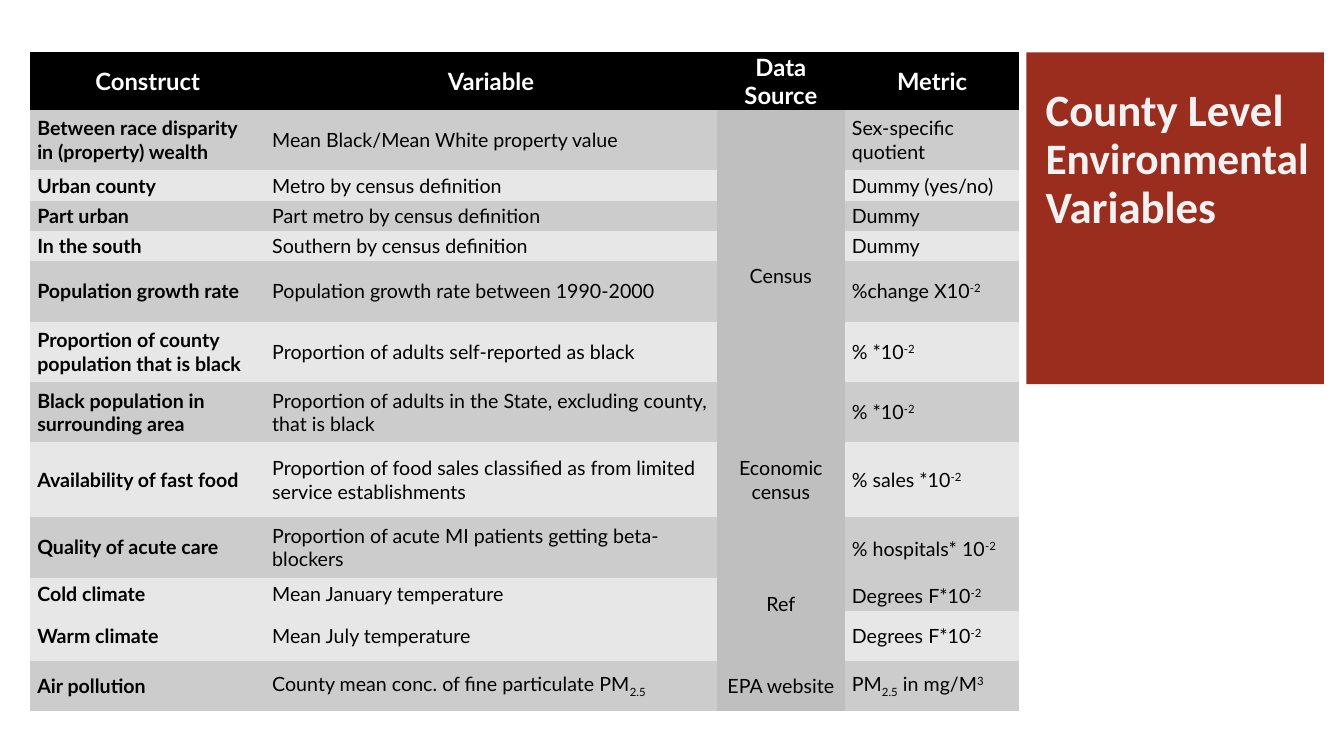
from pptx import Presentation
from pptx.dml.color import RGBColor
from pptx.enum.shapes import MSO_SHAPE
from pptx.enum.text import MSO_ANCHOR, MSO_AUTO_SIZE, PP_ALIGN
from pptx.oxml.ns import qn
from pptx.util import Inches, Pt

RECTANGLE = MSO_SHAPE.RECTANGLE
MIDDLE = MSO_ANCHOR.MIDDLE
NO_AUTOFIT = MSO_AUTO_SIZE.NONE
LEFT, CENTER = PP_ALIGN.LEFT, PP_ALIGN.CENTER

BLACK = RGBColor(0, 0, 0)
WHITE = RGBColor(255, 255, 255)
RED = RGBColor(0x9B, 0x2D, 0x1F)
OFF_WHITE = RGBColor(0xF2, 0xF2, 0xF2)
DARK_BAND = RGBColor(0xCC, 0xCC, 0xCC)
LIGHT_BAND = RGBColor(0xE7, 0xE7, 0xE7)
SOURCE_GRAY = RGBColor(0xBF, 0xBF, 0xBF)
PLAIN_TABLE_STYLE = "{2D5ABB26-0587-4C30-8999-92F81FD0307C}"

SUPERSCRIPT, SUBSCRIPT = 30000, -25000
HUNDREDTH = ("-2", SUPERSCRIPT)
FINE = ("2.5", SUBSCRIPT)

COLUMN_WIDTHS = [2.33, 4.48, 1.27, 1.73]
ROW_HEIGHTS = [0.57, 0.6, 0.3, 0.3, 0.3, 0.6, 0.6, 0.6, 0.74, 0.6, 0.03, 0.3, 0.5, 0.49]
SOURCE_COLUMN, METRIC_COLUMN = 2, 3
MERGES = [(1, 2, 7), (9, 2, 12), (9, 3, 10), (10, 0, 11), (10, 1, 11)]
LIGHT_ROWS = {2, 4, 6, 8, 10, 11, 12}

ROWS = [
    ["Construct", "Variable", "Data Source", "Metric"],
    ["Between race disparity in (property) wealth", "Mean Black/Mean White property value",
     "Census", "Sex-specific quotient"],
    ["Urban county", "Metro by census definition", None, "Dummy (yes/no)"],
    ["Part urban", "Part metro by census definition", None, "Dummy"],
    ["In the south", "Southern by census definition", None, "Dummy"],
    ["Population growth rate", "Population growth rate between 1990-2000",
     None, ["%change X10", HUNDREDTH]],
    ["Proportion of county population that is black",
     "Proportion of adults self-reported as black", None, ["% *10", HUNDREDTH]],
    ["Black population in surrounding area",
     "Proportion of adults in the State, excluding county, that is black",
     None, ["% *10", HUNDREDTH]],
    ["Availability of fast food",
     "Proportion of food sales classified as from limited service establishments",
     "Economic census", ["% sales *10", HUNDREDTH]],
    ["Quality of acute care", "Proportion of acute MI patients getting beta-blockers",
     "Ref", ["% hospitals* 10", HUNDREDTH]],
    ["Cold climate", "Mean January temperature", None, None],
    [None, None, None, ["Degrees F*10", HUNDREDTH]],
    ["Warm climate", "Mean July temperature", None, ["Degrees F*10", HUNDREDTH]],
    ["Air pollution", ["County mean conc. of fine particulate PM", FINE],
     "EPA website", ["PM", FINE, " in mg/M", ("3", SUPERSCRIPT)]],
]


def apply(target, values):
    for name, value in values.items():
        setattr(target, name, value)


class SlideBuilder:
    header_font = {"name": "Lato", "size": Pt(17), "bold": True}
    body_font = {"name": "Lato", "size": Pt(14)}
    title_font = {"name": "Calibri", "bold": True}
    cell_format = {"margin_left": Inches(0.07), "margin_right": Inches(0.07),
                   "margin_top": 0, "margin_bottom": 0, "vertical_anchor": MIDDLE}

    def __init__(self, presentation):
        self.slide = presentation.slides.add_slide(presentation.slide_layouts[5])

    def add_run(self, paragraph, text, font, color, baseline=None):
        run = paragraph.add_run()
        run.text = text
        apply(run.font, font)
        run.font.color.rgb = color
        if baseline:
            run._r.get_or_add_rPr().set("baseline", str(baseline))

    def title(self, parts, left, top, width, height):
        title = self.slide.shapes.title
        apply(title, {"left": Inches(left), "top": Inches(top),
                      "width": Inches(width), "height": Inches(height)})
        apply(title.text_frame, {"word_wrap": True, "auto_size": NO_AUTOFIT,
                                 "vertical_anchor": MIDDLE})
        paragraph = title.text_frame.paragraphs[0]
        apply(paragraph, {"alignment": LEFT, "line_spacing": 0.9})
        for text, size in parts:
            self.add_run(paragraph, text, {**self.title_font, "size": Pt(size)}, OFF_WHITE)

    def title_panel(self, left, top, width, height):
        panel = self.slide.shapes.add_shape(
            RECTANGLE, Inches(left), Inches(top), Inches(width), Inches(height))
        panel.shadow.inherit = False
        panel.fill.solid()
        panel.fill.fore_color.rgb = RED
        panel.line.fill.background()
        self.slide.shapes.title._element.addprevious(panel._element)

    def cell(self, cell, content, row, column):
        is_header = row == 0
        is_source = column == SOURCE_COLUMN
        apply(cell, self.cell_format)
        cell.fill.solid()
        if is_header:
            cell.fill.fore_color.rgb = BLACK
        elif is_source:
            cell.fill.fore_color.rgb = SOURCE_GRAY
        elif row in LIGHT_ROWS and (row, column) != (11, METRIC_COLUMN):
            cell.fill.fore_color.rgb = LIGHT_BAND
        else:
            cell.fill.fore_color.rgb = DARK_BAND
        if content is None:
            return
        paragraph = cell.text_frame.paragraphs[0]
        apply(paragraph, {"alignment": CENTER if is_header or is_source else LEFT,
                          "space_before": Pt(0), "space_after": Pt(2)})
        font = self.header_font if is_header else {**self.body_font, "bold": column == 0}
        color = WHITE if is_header else BLACK
        for part in [content] if isinstance(content, str) else content:
            text, baseline = (part, None) if isinstance(part, str) else part
            self.add_run(paragraph, text, font, color, baseline)

    def table(self, left, top):
        table = self.slide.shapes.add_table(
            len(ROWS), len(COLUMN_WIDTHS), Inches(left), Inches(top),
            Inches(sum(COLUMN_WIDTHS)), Inches(sum(ROW_HEIGHTS))).table
        table._tbl.tblPr.find(qn("a:tableStyleId")).text = PLAIN_TABLE_STYLE
        table.horz_banding = False
        for column, width in zip(table.columns, COLUMN_WIDTHS):
            column.width = Inches(width)
        for row, height in zip(table.rows, ROW_HEIGHTS):
            row.height = Inches(height)
        for row, contents in enumerate(ROWS):
            for column, content in enumerate(contents):
                self.cell(table.cell(row, column), content, row, column)
        for first_row, column, last_row in MERGES:
            table.cell(first_row, column).merge(table.cell(last_row, column))
        table.cell(9, SOURCE_COLUMN).margin_top = Inches(0.3)


def main():
    presentation = Presentation()
    presentation.slide_width = Inches(13.33)
    presentation.slide_height = Inches(7.5)
    builder = SlideBuilder(presentation)
    builder.title([("County Level ", 32), ("Environmental", 31), (" Variables", 32)],
                  10.27, 1.3, 2.99, 0.58)
    builder.title_panel(10.18, 0.52, 2.95, 3.29)
    builder.table(0.3, 0.52)
    presentation.save("out.pptx")


if __name__ == "__main__":
    main()
